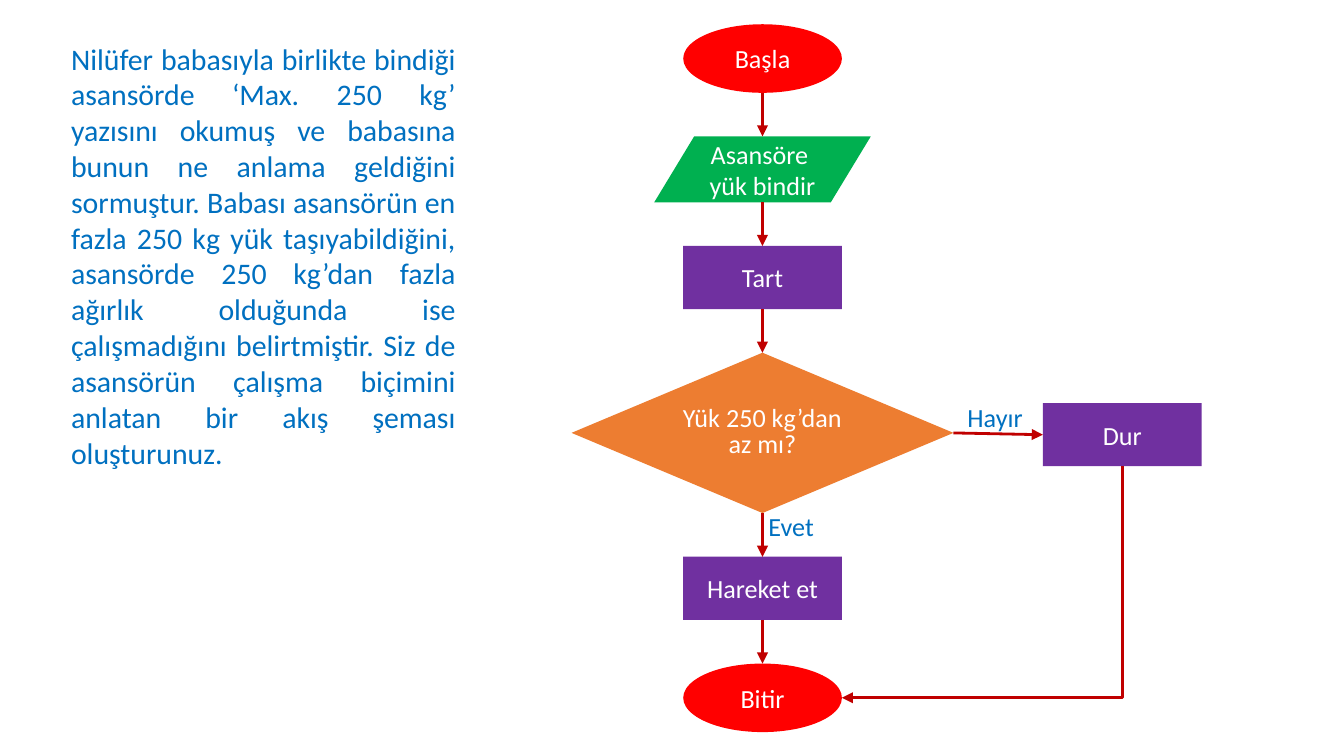
"""Builds a slide with an elevator load problem and its flowchart."""
from lxml.etree import SubElement
from pptx import Presentation
from pptx.dml.color import RGBColor
from pptx.enum.shapes import MSO_CONNECTOR as LINK, MSO_SHAPE as SHAPE
from pptx.enum.text import MSO_ANCHOR as ANCHOR, PP_ALIGN as ALIGN
from pptx.oxml.ns import qn
from pptx.util import Pt

BLUE = RGBColor(0x00, 0x70, 0xC0)
RED = RGBColor(0xFF, 0x00, 0x00)
GREEN = RGBColor(0x00, 0xB0, 0x50)
PURPLE = RGBColor(0x70, 0x30, 0xA0)
ORANGE = RGBColor(0xED, 0x7D, 0x31)
DARK_RED = RGBColor(0xC0, 0x00, 0x00)
WHITE = RGBColor(0xFF, 0xFF, 0xFF)

PROBLEM = (
    "Nilüfer babasıyla birlikte bindiği asansörde ‘Max. 250 kg’ yazısını okumuş "
    "ve babasına bunun ne anlama geldiğini sormuştur. Babası asansörün en fazla "
    "250 kg yük taşıyabildiğini, asansörde 250 kg’dan fazla ağırlık olduğunda ise "
    "çalışmadığını belirtmiştir. Siz de asansörün çalışma biçimini anlatan bir "
    "akış şeması oluşturunuz."
)
STYLES = {
    "terminal": (SHAPE.OVAL, RED, 85, 36.7),
    "input": (SHAPE.PARALLELOGRAM, GREEN, 116, 35.3),
    "process": (SHAPE.RECTANGLE, PURPLE, 85, 33.8),
    "decision": (SHAPE.DIAMOND, ORANGE, 204.6, 85.9),
}
STEPS = [
    ("terminal", "Başla"),
    ("input", "Asansöre \vyük bindir"),
    ("process", "Tart"),
    ("decision", "Yük 250 kg’dan az mı?"),
    ("process", "Hareket et"),
    ("terminal", "Bitir"),
]
STOP_STEP = ("process", "Dur")
TEXTS = [
    (PROBLEM, 16, ALIGN.JUSTIFY, (31, 18, 220.3, 215.3)),
    ("Hayır", 14, ALIGN.LEFT, (511.2, 211.5, 52, 25.9)),
    ("Evet", 14, ALIGN.LEFT, (404.6, 270, 52, 25.9)),
]
CENTER_X, TOP, GAP = 408.5, 13, 23.4
STOP_X, STOP_Y = 601.2, 216


def write(shape, text, size, color, alignment):
    shape.text_frame.word_wrap = True
    shape.text_frame.text = text
    paragraph = shape.text_frame.paragraphs[0]
    paragraph.alignment = alignment
    for name, value in {"name": "Calibri", "size": Pt(size)}.items():
        setattr(paragraph.font, name, value)
    paragraph.font.color.rgb = color
    return paragraph


def add_step(slide, step, center_x, top):
    kind, text = step
    preset, color, width, height = STYLES[kind]
    shape = slide.shapes.add_shape(
        preset, Pt(center_x - width / 2), Pt(top), Pt(width), Pt(height))
    shape.shadow.inherit = False
    shape.fill.solid()
    shape.fill.fore_color.rgb = color
    shape.line.fill.background()
    shape.text_frame.vertical_anchor = ANCHOR.MIDDLE
    paragraph = write(shape, text, 14, WHITE, ALIGN.CENTER)
    if kind == "input":
        shape.adjustments[0] = 0.606
    if kind == "decision":
        paragraph.line_spacing = Pt(14)
    return shape


def add_arrow(slide, start, end, kind=LINK.STRAIGHT):
    arrow = slide.shapes.add_connector(kind, *map(round, start + end))
    arrow.line.color.rgb = DARK_RED
    arrow.line.width = Pt(1.5)
    SubElement(arrow.line._get_or_add_ln(), qn("a:tailEnd"), type="triangle")
    SubElement(arrow._element.spPr, qn("a:effectLst"))
    return arrow


def add_corner_arrow(slide, start, end):
    across, down = start[0] - end[0], end[1] - start[1]
    left = (start[0] + end[0] - down) / 2
    top = (start[1] + end[1] - across) / 2
    arrow = add_arrow(slide, (left, top), (left + down, top + across), LINK.ELBOW)
    properties = arrow._element.spPr
    properties.find(qn("a:xfrm")).set("rot", "5400000")
    properties.find(qn("a:prstGeom")).set("prst", "bentConnector2")


def middle(shape):
    return shape.left + shape.width / 2, shape.top + shape.height / 2


def main():
    presentation = Presentation()
    presentation.slide_width, presentation.slide_height = Pt(720), Pt(405)
    slide = presentation.slides.add_slide(presentation.slide_layouts[6])

    for text, size, alignment, place in TEXTS:
        box = slide.shapes.add_textbox(*map(Pt, place))
        write(box, text, size, BLUE, alignment)

    steps, top = [], TOP
    for step in STEPS:
        steps.append(add_step(slide, step, CENTER_X, top))
        top += STYLES[step[0]][3] + GAP
    stop = add_step(slide, STOP_STEP, STOP_X, STOP_Y)

    for upper, lower in zip(steps, steps[1:]):
        x = middle(upper)[0]
        add_arrow(slide, (x, upper.top + upper.height), (x, lower.top))

    decision, finish = steps[3], steps[-1]
    add_arrow(slide, (decision.left + decision.width, middle(decision)[1]),
              (stop.left, middle(stop)[1]))
    add_corner_arrow(slide, (middle(stop)[0], stop.top + stop.height),
                     (finish.left + finish.width, middle(finish)[1]))
    presentation.save("out.pptx")


if __name__ == "__main__":
    main()
